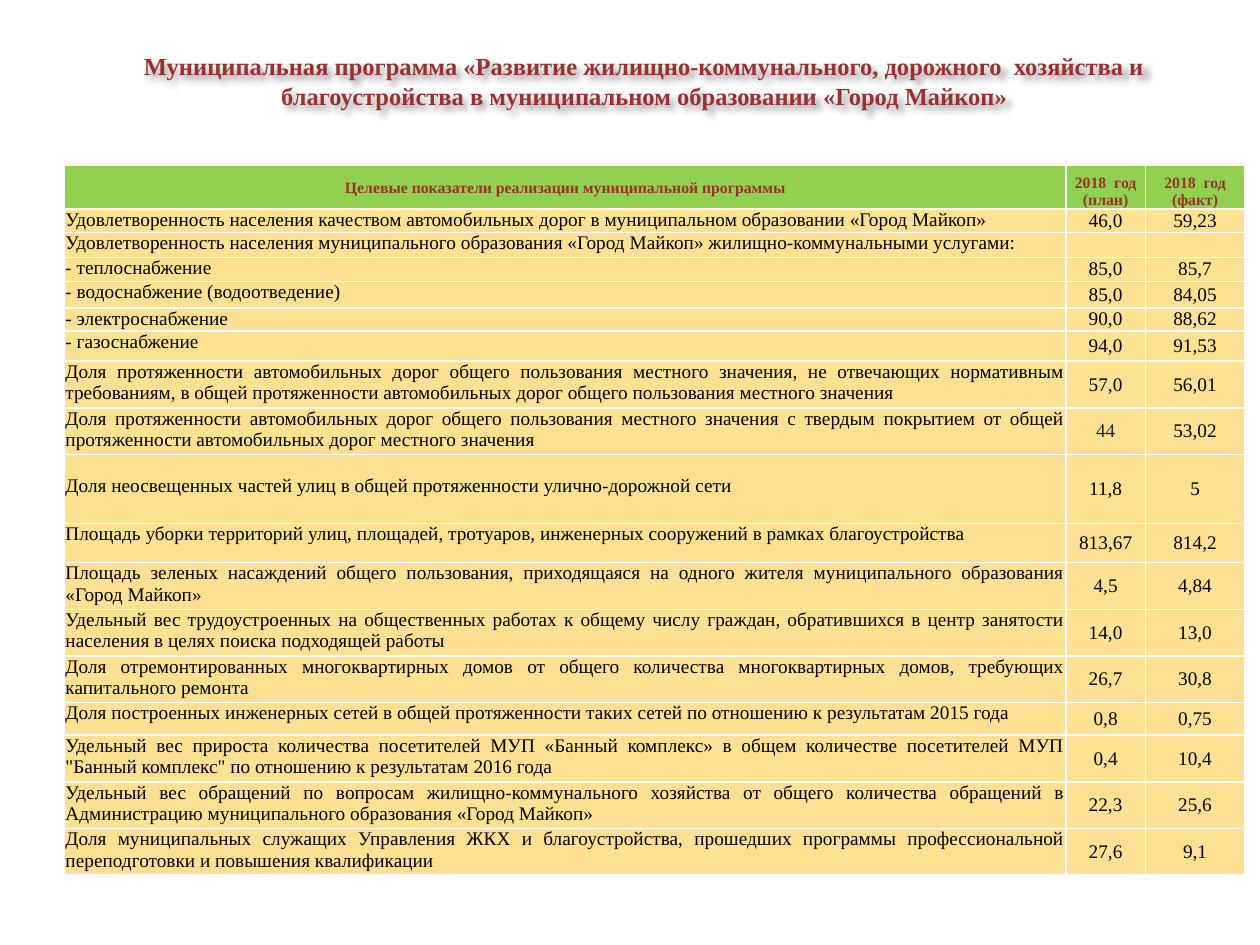
from lxml.etree import SubElement
from pptx import Presentation
from pptx.dml.color import RGBColor
from pptx.enum.text import MSO_ANCHOR, PP_ALIGN
from pptx.oxml.ns import qn
from pptx.util import Inches, Pt

FONT = "Times New Roman"
RED = RGBColor(0x9A, 0x31, 0x30)
GREEN = RGBColor(0x92, 0xD0, 0x50)
SAND = RGBColor(0xFF, 0xE1, 0x93)
BLACK = RGBColor(0, 0, 0)
GRAPHITE = RGBColor(0x22, 0x27, 0x2F)

TITLE = ("Муниципальная программа «Развитие жилищно-коммунального, дорожного  хозяйства и "
         "благоустройства в муниципальном образовании «Город Майкоп»")
HEADER = ("Целевые показатели реализации муниципальной программы",
          "2018  год (план)", "2018  год (факт)")
HEADER_HEIGHT = 0.35
COL_SHARES = (7.95, 0.63, 0.79)
INDICATORS = [
    (0.18, "Удовлетворенность населения качеством автомобильных дорог в муниципальном "
           "образовании «Город Майкоп»", "46,0", "59,23"),
    (0.2, "Удовлетворенность населения муниципального образования «Город Майкоп» "
          "жилищно-коммунальными услугами:", "", ""),
    (0.19, "- теплоснабжение", "85,0", "85,7"),
    (0.21, "- водоснабжение (водоотведение)", "85,0", "84,05"),
    (0.18, "- электроснабжение", "90,0", "88,62"),
    (0.24, "- газоснабжение", "94,0", "91,53"),
    (0.37, "Доля протяженности автомобильных дорог общего пользования местного значения, "
           "не отвечающих нормативным требованиям, в общей протяженности автомобильных дорог "
           "общего пользования местного значения", "57,0", "56,01"),
    (0.37, "Доля протяженности автомобильных дорог общего пользования местного значения "
           "с твердым покрытием от общей протяженности автомобильных дорог местного значения",
     "44", "53,02"),
    (0.55, "Доля неосвещенных частей улиц в общей протяженности улично-дорожной сети",
     "11,8", "5"),
    (0.31, "Площадь уборки территорий улиц, площадей, тротуаров, инженерных сооружений "
           "в рамках благоустройства", "813,67", "814,2"),
    (0.37, "Площадь зеленых насаждений общего пользования, приходящаяся на одного жителя "
           "муниципального образования «Город Майкоп»", "4,5", "4,84"),
    (0.37, "Удельный вес трудоустроенных на общественных работах к общему числу граждан, "
           "обратившихся в центр занятости населения в целях поиска подходящей работы",
     "14,0", "13,0"),
    (0.37, "Доля отремонтированных многоквартирных домов от общего количества "
           "многоквартирных домов, требующих капитального ремонта", "26,7", "30,8"),
    (0.26, "Доля построенных инженерных сетей в общей протяженности таких сетей "
           "по отношению к результатам 2015 года", "0,8", "0,75"),
    (0.37, "Удельный вес прироста количества посетителей МУП «Банный комплекс» в общем "
           "количестве посетителей МУП \"Банный комплекс\" по отношению к результатам 2016 года",
     "0,4", "10,4"),
    (0.37, "Удельный вес обращений по вопросам жилищно-коммунального хозяйства от общего "
           "количества обращений в Администрацию муниципального образования «Город Майкоп»",
     "22,3", "25,6"),
    (0.37, "Доля муниципальных служащих Управления ЖКХ и благоустройства, прошедших программы "
           "профессиональной переподготовки и повышения квалификации", "27,6", "9,1"),
]


def write(p, text, size, color, bold, align):
    """Put text into a paragraph and set its font."""
    if text:
        p.add_run().text = text
    else:
        SubElement(p._p, qn("a:endParaRPr"), sz=str(size * 100))
    p.alignment = align
    p.font.name, p.font.size, p.font.bold = FONT, Pt(size), bold
    p.font.color.rgb = color


def add_shadow(sp):
    """Give a shape a soft shadow to the lower right."""
    effects = SubElement(sp._element.spPr, qn("a:effectLst"))
    shadow = SubElement(effects, qn("a:outerShdw"), blurRad="50800", dist="38100",
                        dir="2700000", algn="tl", rotWithShape="0")
    black = SubElement(shadow, qn("a:srgbClr"), val="000000")
    SubElement(black, qn("a:alpha"), val="40000")


def add_title(s, left, top, width, height):
    """Place the centred slide title in the given box."""
    sp = s.shapes.add_textbox(left, top, width, height)
    tf = sp.text_frame
    tf.word_wrap = True
    write(tf.paragraphs[0], TITLE, 14, RED, True, PP_ALIGN.CENTER)
    add_shadow(sp)


def style_cell(cell, fill, anchor, margin_top=0.0):
    """Set the fill, anchor and margins of a cell."""
    cell.fill.solid()
    cell.fill.fore_color.rgb = fill
    cell.vertical_anchor = anchor
    cell.margin_left = cell.margin_right = Inches(0.01)
    cell.margin_top, cell.margin_bottom = Inches(margin_top), 0


def add_indicators(s, left, top, width, height):
    """Place the table of planned and actual indicators in the given box."""
    table = s.shapes.add_table(len(INDICATORS) + 1, len(HEADER), left, top, width, height).table
    for col, share in zip(table.columns, COL_SHARES):
        col.width = int(width * share / sum(COL_SHARES))
    table.rows[0].height = Inches(HEADER_HEIGHT)
    for j, text in enumerate(HEADER):
        cell = table.cell(0, j)
        style_cell(cell, GREEN, MSO_ANCHOR.BOTTOM if j else MSO_ANCHOR.MIDDLE, 0.01)
        write(cell.text_frame.paragraphs[0], text, 9, RED, True, PP_ALIGN.CENTER)
    for i, (row_height, *texts) in enumerate(INDICATORS, 1):
        table.rows[i].height = Inches(row_height)
        for j, text in enumerate(texts):
            cell = table.cell(i, j)
            lowered = j == 0 and text.startswith("Доля неосвещенных")
            style_cell(cell, SAND, MSO_ANCHOR.MIDDLE if j else MSO_ANCHOR.TOP,
                       0.17 if lowered else 0)
            write(cell.text_frame.paragraphs[0], text, 11, GRAPHITE if text == "44" else BLACK,
                  False, PP_ALIGN.CENTER if j else PP_ALIGN.JUSTIFY)


def main():
    """Build and save the presentation."""
    prs = Presentation()
    prs.slide_width, prs.slide_height = Inches(10), Inches(7.5)
    s = prs.slides.add_slide(prs.slide_layouts[6])
    add_title(s, Inches(0.43), Inches(0.36), Inches(9.37), Inches(0.57))
    add_indicators(s, Inches(0.51), Inches(1.31), Inches(9.37), Inches(5.6))
    prs.save("out.pptx")


if __name__ == "__main__":
    main()
